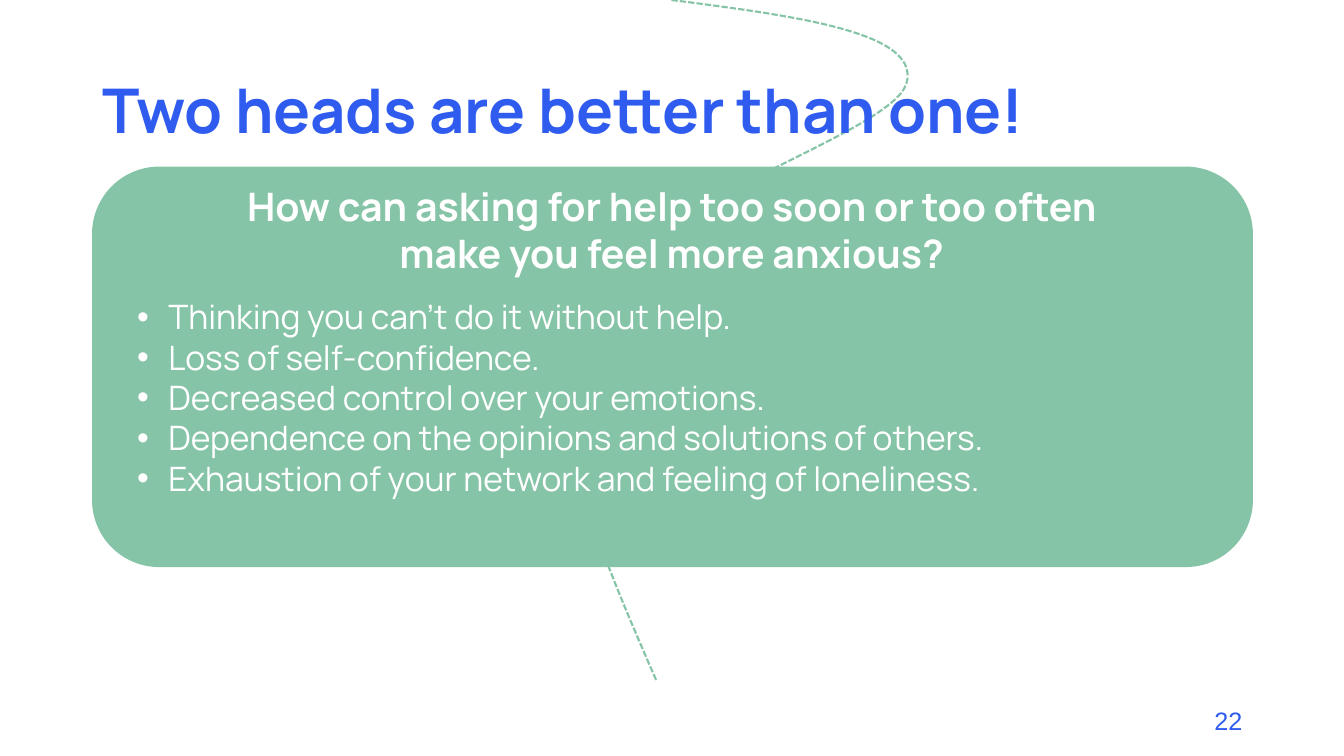
from pptx import Presentation
from pptx.dml.color import RGBColor
from pptx.enum import dml, shapes, text
from pptx.util import Inches, Pt

BLUE, GREEN, WHITE = "2F5CEE", "86C4A7", "FFFFFF"
TITLE = "Two heads are better than one!"
ASK = "How can asking for help too soon or too often make you feel more anxious?"
POINTS = [
    "Thinking you can’t do it without help.",
    "Loss of self-confidence.",
    "Decreased control over your emotions.",
    "Dependence on the opinions and solutions of others.",
    "Exhaustion of your network and feeling of loneliness.",
]
NUMBER = "22"
START = (6.66, 0)
CURVES = [
    [(7.9, 0.16), (9.14, 0.32), (8.99, 0.83)],
    [(8.84, 1.34), (6.17, 2.09), (5.75, 3.07)],
    [(5.34, 4.06), (5.92, 5.4), (6.51, 6.75)],
]
STEPS = 30


def color(code):
    return RGBColor.from_string(code)


def place(shape, left, top, width, height):
    shape.left, shape.top = Inches(left), Inches(top)
    shape.width, shape.height = Inches(width), Inches(height)


def write(shape, lines, size, code, align, bold=False, font="Manrope",
          anchor=text.MSO_ANCHOR.TOP):
    frame = shape.text_frame
    frame.text = "\n".join(lines)
    frame.word_wrap = True
    frame.auto_size = text.MSO_AUTO_SIZE.NONE
    frame.vertical_anchor = anchor
    for para in frame.paragraphs:
        para.alignment = align
        para.space_before = Pt(0)
        for run in para.runs:
            run.font.name, run.font.size = font, Pt(size)
            run.font.bold = bold
            run.font.color.rgb = color(code)


def bezier(a, b, c, d):
    for step in range(1, STEPS + 1):
        t = step / STEPS
        u = 1 - t
        yield tuple(
            Inches(u**3 * p + 3 * u * u * t * q + 3 * u * t * t * r + t**3 * s)
            for p, q, r, s in zip(a, b, c, d))


def trail(slide):
    dots, last = [], START
    for curve in CURVES:
        dots += bezier(last, *curve)
        last = curve[-1]
    pen = slide.shapes.build_freeform(Inches(START[0]), Inches(START[1]))
    pen.add_line_segments(dots, close=False)
    line = pen.convert_to_shape()
    line.shadow.inherit = False
    line.fill.background()
    line.line.color.rgb = color(GREEN)
    line.line.width = Pt(1.5)
    line.line.dash_style = dml.MSO_LINE.SQUARE_DOT


def main():
    deck = Presentation()
    deck.slide_width, deck.slide_height = Inches(13.33), Inches(7.5)
    slide = deck.slides.add_slide(deck.slide_layouts[1])
    title, body = slide.placeholders
    left, center, right = (text.PP_ALIGN.LEFT, text.PP_ALIGN.CENTER,
                           text.PP_ALIGN.RIGHT)

    page = slide.shapes.add_textbox(
        Inches(9.42), Inches(6.95), Inches(3), Inches(0.4))
    write(page, [NUMBER], 18, BLUE, right, font="Arial")

    trail(slide)

    card = slide.shapes.add_shape(
        shapes.MSO_SHAPE.ROUNDED_RECTANGLE,
        Inches(0.92), Inches(1.66), Inches(11.5), Inches(3.96))
    card.shadow.inherit = False
    card.fill.solid()
    card.fill.fore_color.rgb = color(GREEN)
    card.line.color.rgb = color(GREEN)
    card.line.width = Pt(1)

    place(body, 1.26, 2.89, 10.81, 2.12)
    write(body, POINTS, 24, WHITE, left)
    for para in body.text_frame.paragraphs:
        props = para._p.get_or_add_pPr()
        props.set("marL", str(Inches(0.31)))
        props.set("indent", str(-Inches(0.31)))
    slide.shapes._spTree.append(body._element)

    ask = slide.shapes.add_textbox(
        Inches(1.92), Inches(1.76), Inches(9.48), Inches(1.04))
    write(ask, [ASK], 28, WHITE, center, bold=True)

    place(title, 0.92, 0.4, 11.5, 1.45)
    write(title, [TITLE], 44, BLUE, left, bold=True,
          anchor=text.MSO_ANCHOR.MIDDLE)
    title.text_frame.paragraphs[0].line_spacing = 0.9
    slide.shapes._spTree.append(title._element)

    deck.save("out.pptx")


if __name__ == "__main__":
    main()
